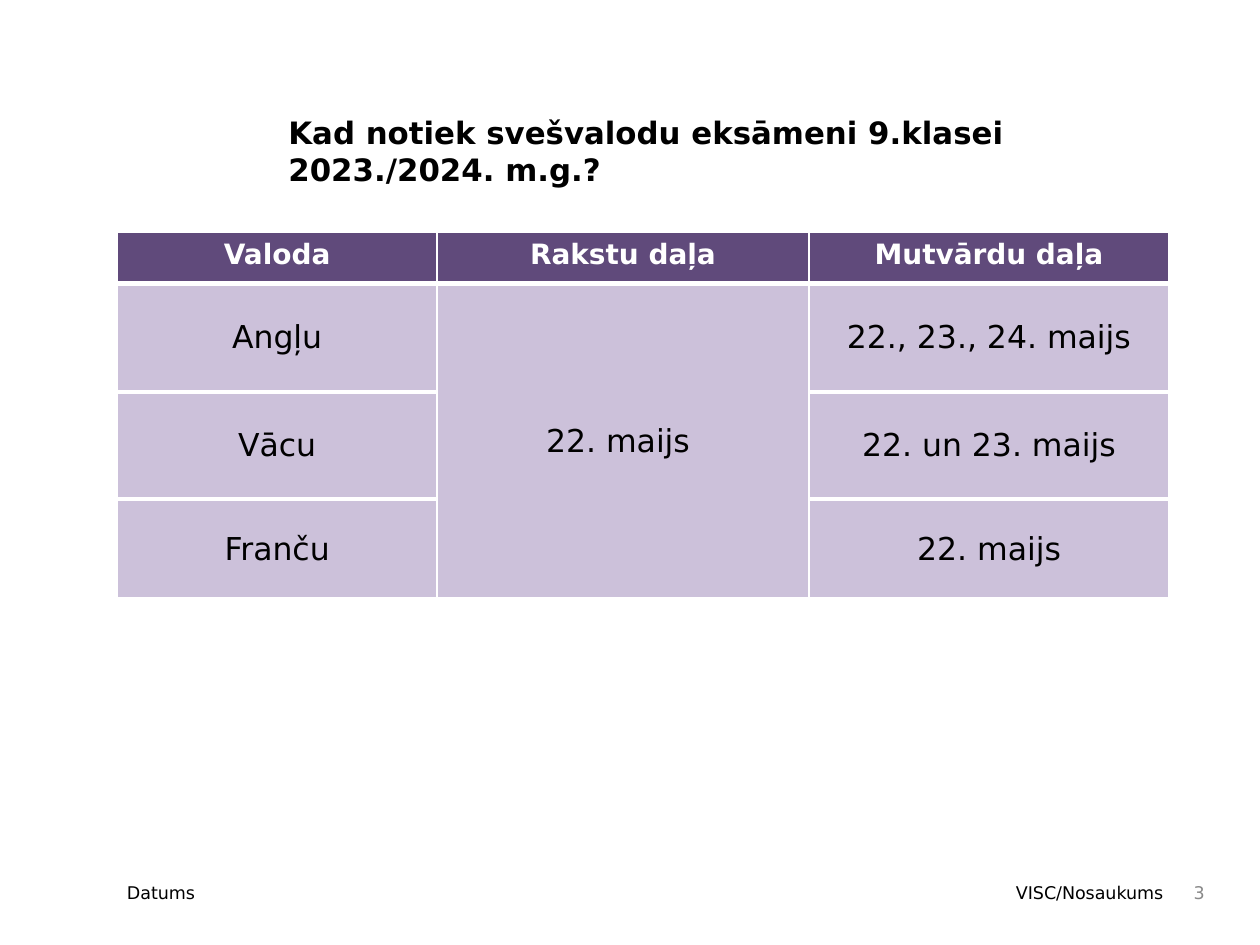
from lxml import etree
from pptx import Presentation
from pptx.dml.color import RGBColor
from pptx.enum.text import MSO_ANCHOR, PP_ALIGN
from pptx.oxml.ns import qn
from pptx.util import Inches, Pt

COLORS = {
    "text": "000000",
    "muted": "898989",
    "white": "FFFFFF",
    "header": "604A7B",
    "body": "CCC1DA",
}
FONT = "DejaVu Sans"
COLUMN_WIDTHS = [2.54, 2.95, 2.86]
ROW_HEIGHTS = [0.41, 0.86, 0.85, 0.8]
EXAM_ROWS = [
    ["Valoda", "Rakstu daļa", "Mutvārdu daļa"],
    ["Angļu", "22. maijs ", "22., 23., 24. maijs"],
    ["Vācu", "", "22. un 23. maijs"],
    ["Franču", "", "22. maijs"],
]


def write_text(frame, text, size=10, color="text", bold=False, align=PP_ALIGN.LEFT):
    paragraph = frame.paragraphs[0]
    paragraph.alignment = align
    run = paragraph.add_run()
    run.text = text
    run.font.name = FONT
    run.font.size = Pt(size)
    run.font.bold = bold
    run.font.color.rgb = RGBColor.from_string(COLORS[color])


def add_text(slide, box, text, anchor=MSO_ANCHOR.MIDDLE, **text_format):
    frame = slide.shapes.add_textbox(*map(Inches, box)).text_frame
    frame.word_wrap = True
    frame.vertical_anchor = anchor
    write_text(frame, text, **text_format)


def set_borders(cell, widths):
    """Draw white borders; widths maps an edge tag to points."""
    properties = cell._tc.get_or_add_tcPr()
    for index, (edge, width) in enumerate(widths.items()):
        line = etree.Element(qn(f"a:{edge}"), w=str(Pt(width)))
        fill = etree.SubElement(line, qn("a:solidFill"))
        etree.SubElement(fill, qn("a:srgbClr"), val=COLORS["white"])
        properties.insert(index, line)


def add_exam_table(slide, left, top):
    table = slide.shapes.add_table(
        len(ROW_HEIGHTS), len(COLUMN_WIDTHS), Inches(left), Inches(top),
        Inches(sum(COLUMN_WIDTHS)), Inches(sum(ROW_HEIGHTS)),
    ).table
    for column, width in zip(table.columns, COLUMN_WIDTHS):
        column.width = Inches(width)
    for row, height in zip(table.rows, ROW_HEIGHTS):
        row.height = Inches(height)

    # One written exam date covers all languages
    table.cell(1, 1).merge(table.cell(3, 1))

    for row_index, texts in enumerate(EXAM_ROWS):
        is_header = row_index == 0
        for column_index, text in enumerate(texts):
            cell = table.cell(row_index, column_index)
            cell.fill.solid()
            cell.fill.fore_color.rgb = RGBColor.from_string(
                COLORS["header" if is_header else "body"])
            set_borders(cell, {"lnL": 1, "lnR": 1,
                               "lnT": 1 if is_header else 3, "lnB": 3})
            cell.vertical_anchor = MSO_ANCHOR.TOP if is_header else MSO_ANCHOR.MIDDLE
            if text:
                write_text(cell.text_frame, text, size=16 if is_header else 18,
                           color="white" if is_header else "text",
                           bold=is_header, align=PP_ALIGN.CENTER)


def add_footer(slide, top, height):
    add_text(slide, (0.91, top, 2.5, height), "Datums")
    add_text(slide, (4.98, top, 4.35, height), "VISC/Nosaukums", align=PP_ALIGN.RIGHT)
    add_text(slide, (9.25, top, 0.41, height), "3", color="muted", align=PP_ALIGN.RIGHT)


def main():
    presentation = Presentation()
    presentation.slide_width = Inches(10)
    presentation.slide_height = Inches(7.5)
    slide = presentation.slides.add_slide(presentation.slide_layouts[6])

    add_footer(slide, top=6.92, height=0.33)
    add_exam_table(slide, left=0.93, top=1.84)
    # Title
    add_text(slide, (2.19, 0.85, 7.15, 0.69),
             "Kad notiek svešvalodu eksāmeni 9.klasei 2023./2024. m.g.? ",
             anchor=MSO_ANCHOR.TOP, size=17.6, bold=True)
    presentation.save("out.pptx")


if __name__ == "__main__":
    main()
